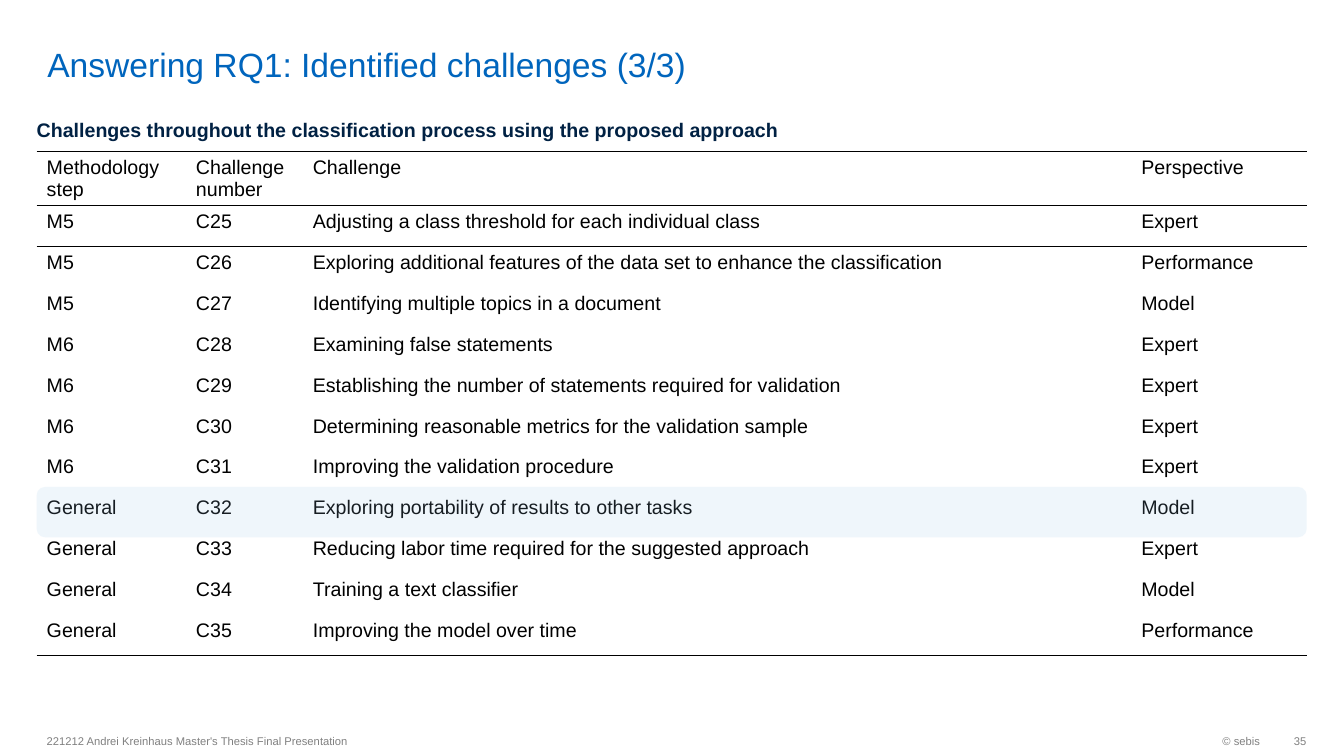
from dataclasses import dataclass

from lxml import etree
from pptx import Presentation
from pptx.dml.color import RGBColor
from pptx.enum.shapes import MSO_SHAPE
from pptx.enum.text import MSO_ANCHOR, PP_ALIGN
from pptx.oxml.ns import qn
from pptx.util import Pt

ROUNDED = MSO_SHAPE.ROUNDED_RECTANGLE
TOP, MIDDLE, BOTTOM = MSO_ANCHOR.TOP, MSO_ANCHOR.MIDDLE, MSO_ANCHOR.BOTTOM
LEFT, RIGHT = PP_ALIGN.LEFT, PP_ALIGN.RIGHT
TITLE_ONLY_LAYOUT = 5
NO_STYLE = "{2D5ABB26-0587-4C30-8999-92F81FD0307C}"


@dataclass(frozen=True)
class Theme:
    font: str = "Arial"
    title_color: str = "0065BD"
    heading_color: str = "002143"
    text_color: str = "000000"
    footer_color: str = "808080"
    highlight_color: str = "98C6EA"
    highlight_percent: int = 15
    title_size: float = 24
    body_size: float = 14
    footer_size: float = 8
    rule_width: float = 1


@dataclass(frozen=True)
class Box:
    left: float
    top: float
    width: float
    height: float

    def lengths(self) -> tuple:
        return Pt(self.left), Pt(self.top), Pt(self.width), Pt(self.height)


@dataclass(frozen=True)
class Label:
    text: str
    box: Box
    size: float
    color: str
    bold: bool = False
    align: PP_ALIGN = LEFT
    anchor: MSO_ANCHOR = MIDDLE
    margins: tuple = (7.2, 3.6, 7.2, 3.6)


THEME = Theme()
TABLE_LEFT, TABLE_TOP, TABLE_WIDTH = 26.2, 108, 907.2
HEADER_HEIGHT, ROW_HEIGHT = 39, 29.2
COLUMN_WIDTHS = (106.6, 83.5, 591.8, 125.3)
FOOTER_TOP, FOOTER_HEIGHT = 517.5, 23

TITLE = Label("Answering RQ1: Identified challenges (3/3)", Box(26.6, 3.6, 833.8, 56.9),
              THEME.title_size, THEME.title_color, anchor=BOTTOM, margins=(7.2, 0, 7.2, 0))
LABELS = (
    Label("© sebis", Box(738.7, FOOTER_TOP, 168.5, FOOTER_HEIGHT),
          THEME.footer_size, THEME.footer_color, align=RIGHT),
    Label("221212 Andrei Kreinhaus Master's Thesis Final Presentation",
          Box(TABLE_LEFT, FOOTER_TOP, 453.6, FOOTER_HEIGHT),
          THEME.footer_size, THEME.footer_color),
    Label("35", Box(907.2, FOOTER_TOP, 26, FOOTER_HEIGHT),
          THEME.footer_size, THEME.footer_color, align=RIGHT, margins=(7.2, 3.6, 0, 3.6)),
    Label("Challenges throughout the classification process using the proposed approach",
          Box(TABLE_LEFT, 84.5, 540, 23.5), THEME.body_size, THEME.heading_color,
          bold=True, anchor=TOP, margins=(0, 0, 0, 0)),
)
HIGHLIGHT = Box(TABLE_LEFT, 347.8, TABLE_WIDTH, 36)

HEADERS = ("Methodology step", "Challenge number", "Challenge", "Perspective")
FIRST_NUMBER = 25
CHALLENGES = (
    ("M5", "Adjusting a class threshold for each individual class", "Expert"),
    ("M5", "Exploring additional features of the data set to enhance the classification",
     "Performance"),
    ("M5", "Identifying multiple topics in a document", "Model"),
    ("M6", "Examining false statements", "Expert"),
    ("M6", "Establishing the number of statements required for validation", "Expert"),
    ("M6", "Determining reasonable metrics for the validation sample", "Expert"),
    ("M6", "Improving the validation procedure", "Expert"),
    ("General", "Exploring portability of results to other tasks", "Model"),
    ("General", "Reducing labor time required for the suggested approach", "Expert"),
    ("General", "Training a text classifier", "Model"),
    ("General", "Improving the model over time", "Performance"),
)


def add_run(paragraph, text: str, size: float, color: str, bold: bool = False) -> None:
    run = paragraph.add_run()
    run.text = text
    run.font.name = THEME.font
    run.font.size = Pt(size)
    run.font.bold = bold
    run.font.color.rgb = RGBColor.from_string(color)


def write_label(shape, label: Label) -> None:
    frame = shape.text_frame
    frame.word_wrap = True
    frame.vertical_anchor = label.anchor
    (frame.margin_left, frame.margin_top,
     frame.margin_right, frame.margin_bottom) = map(Pt, label.margins)
    paragraph = frame.paragraphs[0]
    paragraph.alignment = label.align
    add_run(paragraph, label.text, label.size, label.color, label.bold)


def add_title(slide, label: Label) -> None:
    title = slide.shapes.title
    title.left, title.top, title.width, title.height = label.box.lengths()
    write_label(title, label)


def add_rules(cell, sides: list[str]) -> None:
    properties = cell._tc.get_or_add_tcPr()
    for position, side in enumerate(sides):
        line = etree.Element(qn(f"a:{side}"), w=str(Pt(THEME.rule_width)))
        fill = etree.SubElement(line, qn("a:solidFill"))
        etree.SubElement(fill, qn("a:srgbClr"), val=THEME.text_color)
        properties.insert(position, line)


def add_challenge_table(slide) -> None:
    rows = [HEADERS] + [
        (step, f"C{number}", challenge, perspective)
        for number, (step, challenge, perspective) in enumerate(CHALLENGES, FIRST_NUMBER)
    ]
    box = Box(TABLE_LEFT, TABLE_TOP, TABLE_WIDTH, HEADER_HEIGHT + ROW_HEIGHT * len(CHALLENGES))
    table = slide.shapes.add_table(len(rows), len(HEADERS), *box.lengths()).table
    table.first_row = False
    table.horz_banding = False
    table._tbl.tblPr.find(qn("a:tableStyleId")).text = NO_STYLE
    for column, width in zip(table.columns, COLUMN_WIDTHS):
        column.width = Pt(width)
    ruled_rows = (0, 1, len(rows) - 1)
    for row_index, texts in enumerate(rows):
        table.rows[row_index].height = Pt(ROW_HEIGHT if row_index else HEADER_HEIGHT)
        sides = ["lnT"] if row_index == 0 else []
        if row_index in ruled_rows:
            sides.append("lnB")
        for column_index, text in enumerate(texts):
            cell = table.cell(row_index, column_index)
            cell.fill.background()
            add_rules(cell, sides)
            add_run(cell.text_frame.paragraphs[0], text, THEME.body_size, THEME.text_color)


def add_highlight(slide, box: Box) -> None:
    shape = slide.shapes.add_shape(ROUNDED, *box.lengths())
    shape.shadow.inherit = False
    shape.line.fill.background()
    shape.fill.solid()
    shape.fill.fore_color.rgb = RGBColor.from_string(THEME.highlight_color)
    color = shape._element.spPr.find(qn("a:solidFill")).find(qn("a:srgbClr"))
    etree.SubElement(color, qn("a:alpha"), val=str(THEME.highlight_percent * 1000))


def main() -> None:
    presentation = Presentation()
    presentation.slide_width, presentation.slide_height = Pt(960), Pt(540)
    slide = presentation.slides.add_slide(presentation.slide_layouts[TITLE_ONLY_LAYOUT])
    add_title(slide, TITLE)
    add_challenge_table(slide)
    for label in LABELS:
        write_label(slide.shapes.add_textbox(*label.box.lengths()), label)
    add_highlight(slide, HIGHLIGHT)
    presentation.save("out.pptx")


if __name__ == "__main__":
    main()
